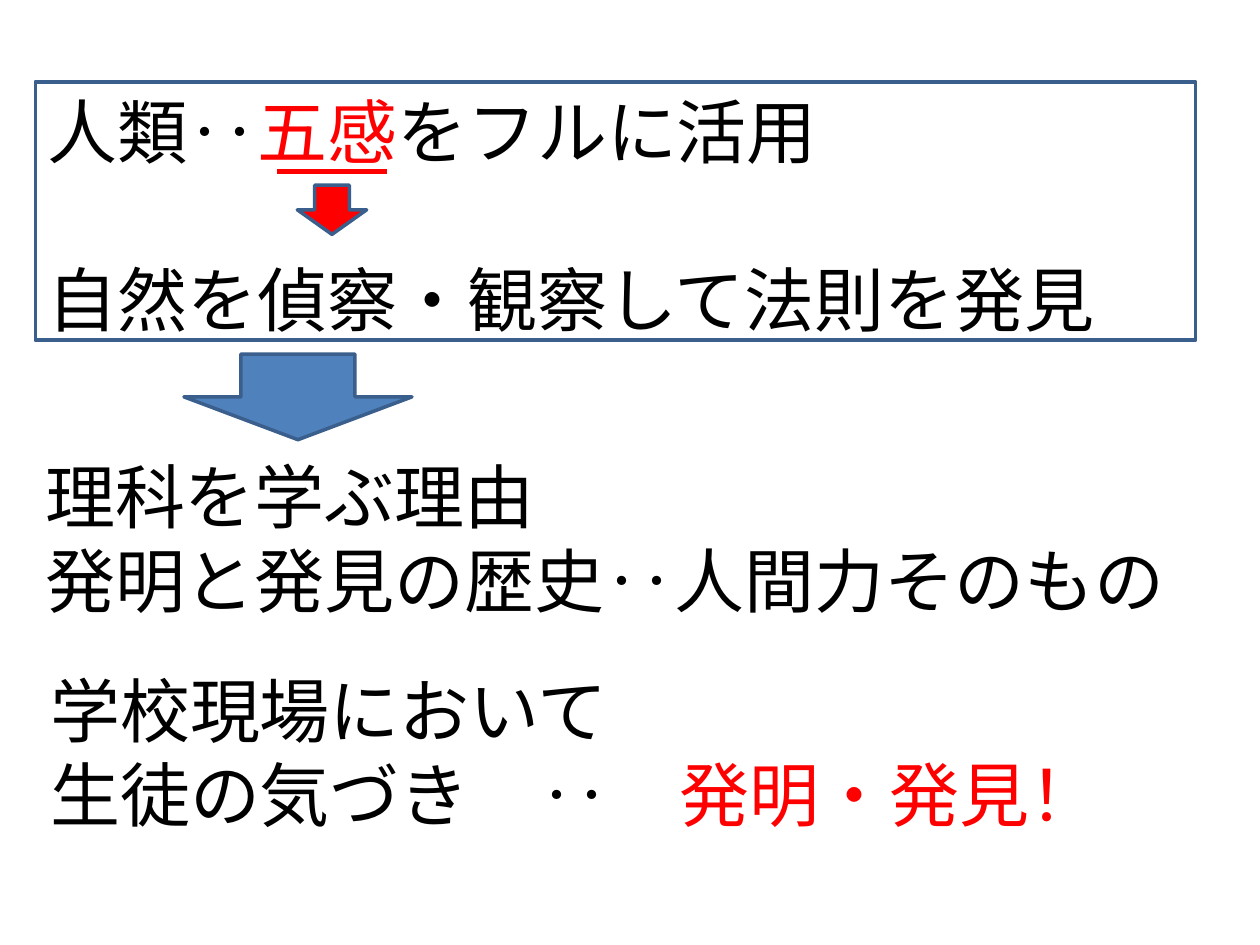
from pptx import Presentation
from pptx.dml.color import RGBColor
from pptx.enum.shapes import MSO_CONNECTOR, MSO_SHAPE
from pptx.enum.text import MSO_AUTO_SIZE
from pptx.oxml.ns import qn
from pptx.util import Inches, Pt
from lxml.etree import SubElement

BLACK, RED, BLUE, EDGE = "000000", "FF0000", "4F81BD", "3A5F8C"

# Each text: place, gap between lines in points, lines of (words, colour)
TEXTS = [
    ((0.28, 0.65, 8.58, 2.12), 48, [
        [("人類‥", BLACK), ("五感", RED), ("をフルに活用", BLACK)],
        [("自然を偵察・観察して法則を発見", BLACK)]]),
    ((0.26, 3.55, 9.72, 1.45), 0, [
        [("理科を学ぶ理由", BLACK)],
        [("発明と発見の歴史‥人間力そのもの", BLACK)]]),
    ((0.3, 5.25, 8.58, 1.45), 0, [
        [("学校現場において", BLACK)],
        [("生徒の気づき　‥　", BLACK), ("発明・発見！", RED)]]),
]
SHAPES = [
    (MSO_SHAPE.DOWN_ARROW, (2.36, 1.47, 0.55, 0.39), RED),
    (MSO_SHAPE.RECTANGLE, (0.28, 0.65, 9.21, 2.05), None),
    (MSO_SHAPE.DOWN_ARROW, (1.46, 2.81, 1.81, 0.68), BLUE),
]
UNDERLINE = (2.2, 1.36, 3.07, 1.36)


def inches(place):
    return [Inches(n) for n in place]


def color(fmt, code):
    fmt.rgb = RGBColor.from_string(code)


def add_text(slide, lines, place, gap=0, size=40, font="Calibri"):
    frame = slide.shapes.add_textbox(*inches(place)).text_frame
    frame.word_wrap = True
    frame.auto_size = MSO_AUTO_SIZE.SHAPE_TO_FIT_TEXT
    for i, line in enumerate(lines):
        para = frame.add_paragraph() if i else frame.paragraphs[0]
        para.space_before = Pt(gap if i else 0)
        for words, code in line:
            run = para.add_run()
            run.text = words
            run.font.size, run.font.name = Pt(size), font
            color(run.font.color, code)


def add_shape(slide, kind, place, fill):
    shape = slide.shapes.add_shape(kind, *inches(place))
    shape.shadow.inherit = False
    if fill:
        shape.fill.solid()
        color(shape.fill.fore_color, fill)
    else:
        shape.fill.background()
    color(shape.line.color, EDGE)
    shape.line.width = Pt(2)


def add_line(slide, ends, code, width):
    line = slide.shapes.add_connector(MSO_CONNECTOR.STRAIGHT, *inches(ends))
    color(line.line.color, code)
    line.line.width = Pt(width)
    SubElement(line._element.spPr, qn("a:effectLst"))


def main():
    deck = Presentation()
    deck.slide_width, deck.slide_height = Inches(10), Inches(7.5)
    slide = deck.slides.add_slide(deck.slide_layouts[6])
    for place, gap, lines in TEXTS:
        add_text(slide, lines, place, gap=gap)
    add_line(slide, UNDERLINE, RED, 3)
    for kind, place, fill in SHAPES:
        add_shape(slide, kind, place, fill)
    deck.save("out.pptx")


if __name__ == "__main__":
    main()
